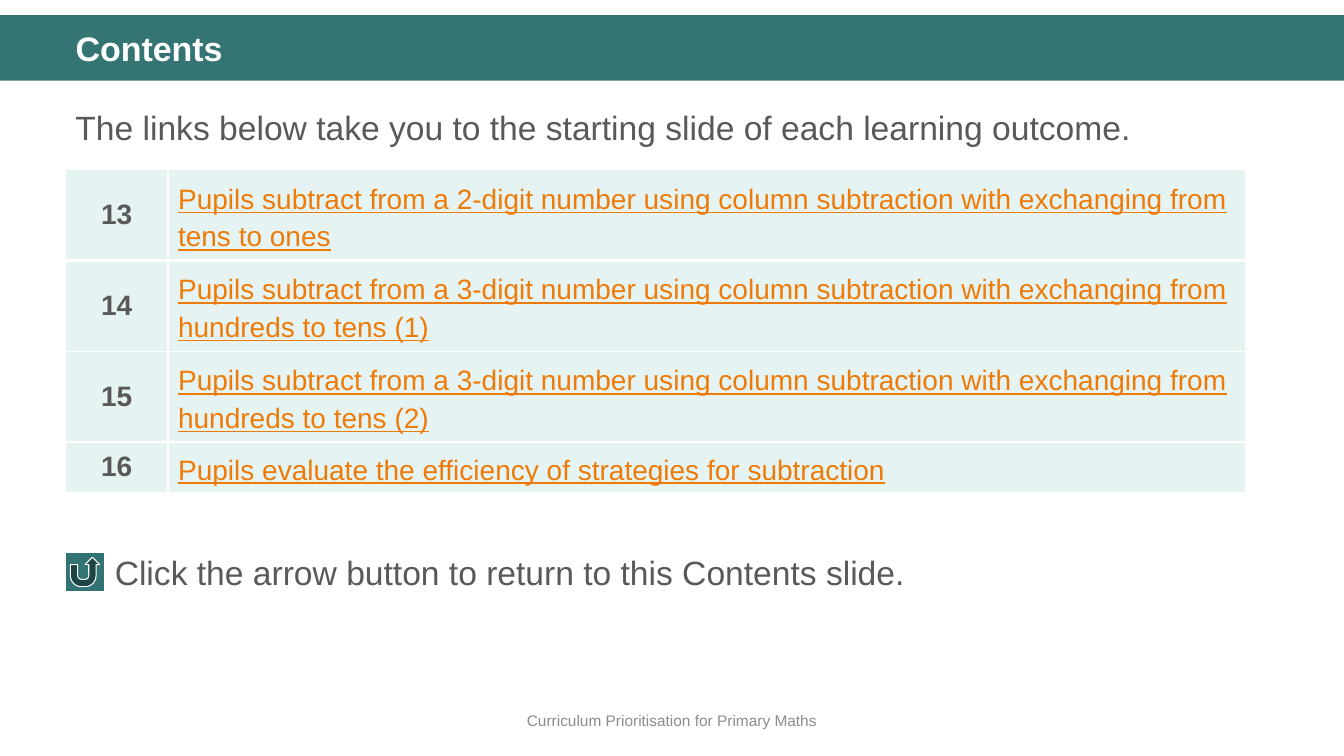
from dataclasses import dataclass

from lxml import etree
from pptx import Presentation
from pptx.dml.color import RGBColor
from pptx.enum import shapes, text
from pptx.oxml.ns import qn
from pptx.util import Pt


@dataclass(frozen=True)
class Theme:
    font: str = "Arial"
    bar: str = "347574"
    button: str = "327473"
    cell: str = "E5F3F2"
    white: str = "FFFFFF"
    body: str = "595959"
    link: str = "EE7B08"
    muted: str = "8C8C8C"
    title_size: float = 24.3
    body_size: float = 24
    table_size: float = 20
    footer_size: float = 11


class SlideBuilder:
    def __init__(self, presentation, theme):
        self.theme = theme
        self.slide = presentation.slides.add_slide(presentation.slide_layouts[5])

    def add_words(self, frame, words, size, color, bold=False, underline=False,
                  align=text.PP_ALIGN.LEFT, spacing=1.0, before=0):
        paragraph = frame.paragraphs[0]
        paragraph.alignment = align
        paragraph.line_spacing = spacing
        paragraph.space_before = Pt(before)
        run = paragraph.add_run()
        run.text = words
        font = run.font
        font.name, font.size = self.theme.font, Pt(size)
        font.bold, font.underline = bold, underline
        font.color.rgb = RGBColor.from_string(color)

    def title(self, box, words):
        title = self.slide.shapes.title
        title.left, title.top, title.width, title.height = map(Pt, box)
        frame = title.text_frame
        frame.auto_size = text.MSO_AUTO_SIZE.NONE
        frame.vertical_anchor = text.MSO_ANCHOR.TOP
        self.add_words(frame, words, self.theme.title_size, self.theme.white,
                       bold=True, spacing=0.9)

    def text_box(self, box, words, size, color, anchor=text.MSO_ANCHOR.TOP, **style):
        frame = self.slide.shapes.add_textbox(*map(Pt, box)).text_frame
        frame.word_wrap = True
        frame.vertical_anchor = anchor
        self.add_words(frame, words, size, color, **style)

    def block(self, kind, box, fill, line=None):
        shape = self.slide.shapes.add_shape(kind, *map(Pt, box))
        shape.shadow.inherit = False
        shape.fill.solid()
        shape.fill.fore_color.rgb = RGBColor.from_string(fill)
        if line:
            shape.line.color.rgb = RGBColor.from_string(line)
            shape.line.width = Pt(0.75)
        else:
            shape.line.fill.background()
        return shape

    def send_to_back(self, shape):
        self.slide.shapes._spTree.insert(2, shape._element)

    def borders(self, cell, widths):
        properties = cell._tc.get_or_add_tcPr()
        for index, (side, width) in enumerate(widths.items()):
            line = etree.Element(qn(f"a:ln{side}"), w=str(Pt(width)))
            fill = etree.SubElement(line, qn("a:solidFill"))
            etree.SubElement(fill, qn("a:srgbClr"), val=self.theme.white)
            properties.insert(index, line)

    def outcomes_table(self, left, top, widths, heights, outcomes):
        theme = self.theme
        table = self.slide.shapes.add_table(
            len(outcomes), len(widths), Pt(left), Pt(top),
            Pt(sum(widths)), Pt(sum(heights))).table
        table.first_row = table.horz_banding = False
        for column, width in zip(table.columns, widths):
            column.width = Pt(width)
        for index, (number, outcome) in enumerate(outcomes):
            table.rows[index].height = Pt(heights[index])
            number_cell, outcome_cell = table.rows[index].cells
            self.add_words(number_cell.text_frame, number, theme.table_size, theme.body,
                           bold=True, align=text.PP_ALIGN.CENTER)
            self.add_words(outcome_cell.text_frame, outcome, theme.table_size, theme.link,
                           underline=True, spacing=1.2)
            for cell in (number_cell, outcome_cell):
                cell.vertical_anchor = text.MSO_ANCHOR.MIDDLE
                cell.fill.solid()
                cell.fill.fore_color.rgb = RGBColor.from_string(theme.cell)
                # The first row is set off by a thicker rule
                self.borders(cell, {"L": 1, "R": 1, "T": 3 if index == 1 else 1,
                                    "B": 3 if index == 0 else 1})


OUTCOMES = [
    ("13", "Pupils subtract from a 2-digit number using column subtraction "
           "with exchanging from tens to ones"),
    ("14", "Pupils subtract from a 3-digit number using column subtraction "
           "with exchanging from hundreds to tens (1)"),
    ("15", "Pupils subtract from a 3-digit number using column subtraction "
           "with exchanging from hundreds to tens (2)"),
    ("16", "Pupils evaluate the efficiency of strategies for subtraction"),
]


def main():
    presentation = Presentation()
    presentation.slide_width, presentation.slide_height = Pt(960), Pt(540)
    theme = Theme()
    builder = SlideBuilder(presentation, theme)
    left = 46.8

    # Title bar
    bar = builder.block(shapes.MSO_SHAPE.RECTANGLE, (0, 10.8, 960, 46.8), theme.bar)
    builder.send_to_back(bar)
    builder.title((left, 19.4, 877, 33.8), "Contents")

    # Introduction and learning outcomes
    builder.text_box((left, 67, 877, 50),
                     "The links below take you to the starting slide of each learning outcome.",
                     theme.body_size, theme.body, spacing=1.2, before=10)
    builder.outcomes_table(left, 121.2, (73.2, 770), (60.6, 60.6, 60.6, 33), OUTCOMES)

    # Return button and its explanation
    builder.block(shapes.MSO_SHAPE.ACTION_BUTTON_RETURN, (left, 394.6, 28, 28),
                  theme.button, theme.white)
    builder.text_box((74.9, 391, 815, 36),
                     "Click the arrow button to return to this Contents slide.",
                     theme.body_size, theme.body)

    # Footer
    builder.text_box((0, 500.4, 960, 28.8), "Curriculum Prioritisation for Primary Maths",
                     theme.footer_size, theme.muted, anchor=text.MSO_ANCHOR.MIDDLE,
                     align=text.PP_ALIGN.CENTER)

    presentation.save("out.pptx")


if __name__ == "__main__":
    main()
